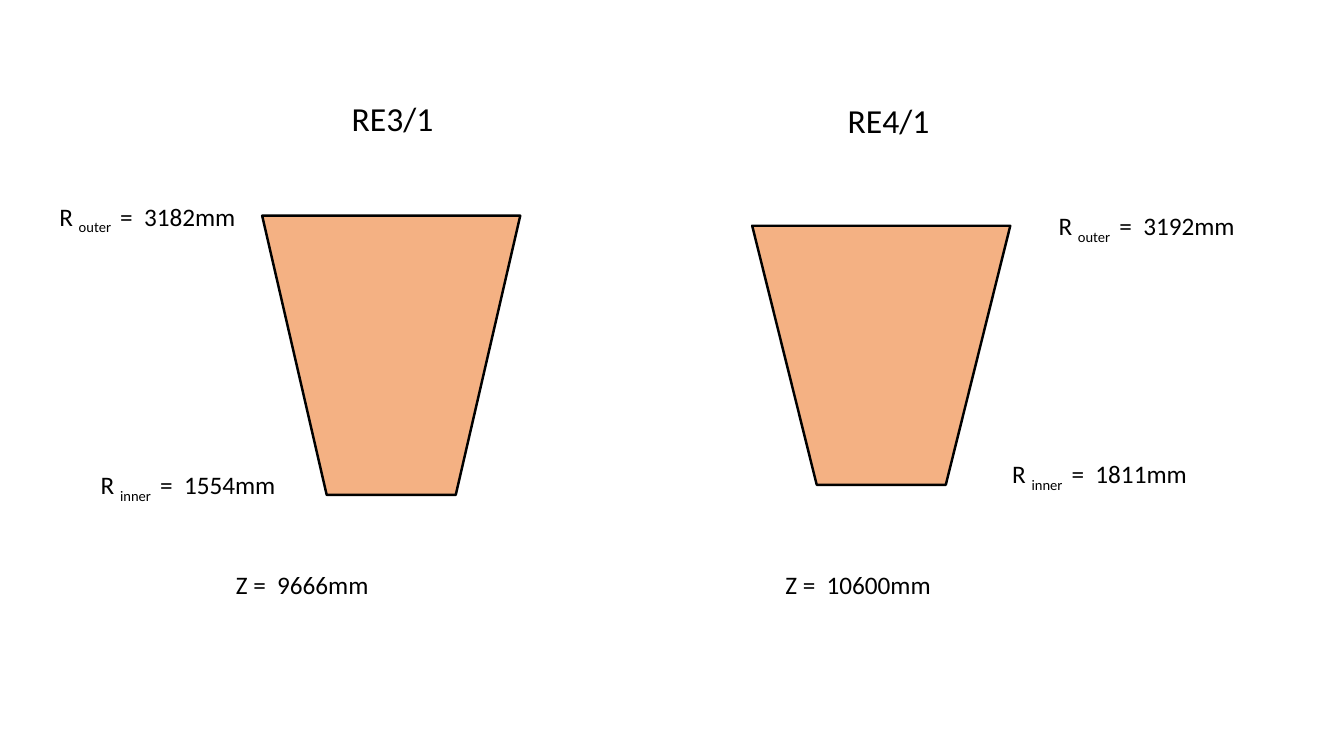
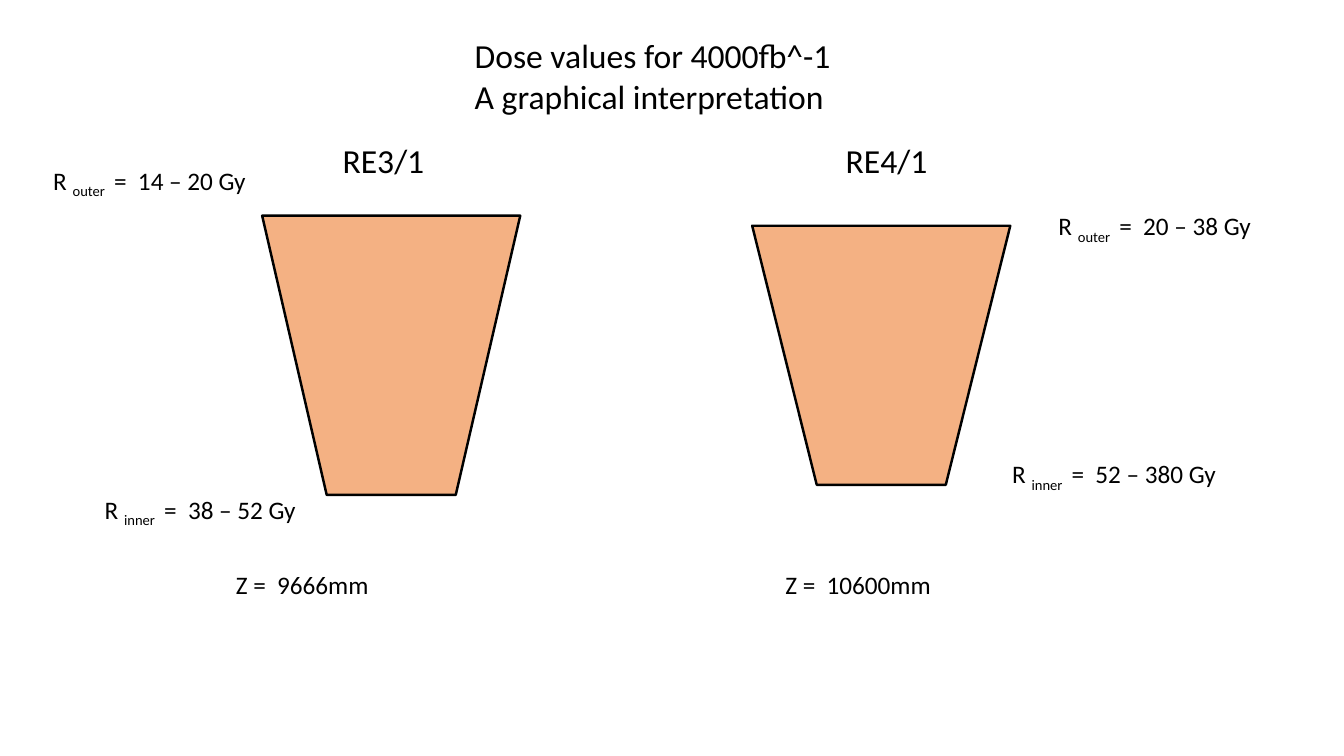
from dataclasses import dataclass

from pptx import Presentation
from pptx.dml.color import RGBColor
from pptx.enum.shapes import MSO_SHAPE
from pptx.enum.text import MSO_AUTO_SIZE
from pptx.util import Inches, Pt

TRAPEZOID = MSO_SHAPE.TRAPEZOID
GROW = MSO_AUTO_SIZE.SHAPE_TO_FIT_TEXT

COLORS = {"ink": "000000", "chamber": "F4B183"}
FONT = "Calibri"
HEAD, BODY = 24, 18


@dataclass
class Chamber:
    left: float
    top: float
    width: float
    height: float


@dataclass
class Label:
    text: str
    left: float
    top: float
    width: float
    size: int = BODY
    sub: str = ""  # subscript after the leading "R "


# Parts shared by both slides
CHAMBERS = [Chamber(2.6, 2.14, 2.56, 2.77), Chamber(7.46, 2.24, 2.56, 2.57)]
DEPTHS = [
    Label("Z =  9666mm", 2.24, 5.6, 2.11),
    Label("Z =  10600mm", 7.69, 5.6, 2.11),
]

# Labels of each slide
RADII = [
    Label("RE3/1", 3.39, 0.92, 1.34, HEAD),
    Label("RE4/1", 8.31, 0.94, 1.13, HEAD),
    Label(" =  3182mm", 0.49, 1.95, 2.11, sub="outer "),
    Label(" =  1811mm", 9.94, 4.5, 2.11, sub="inner "),
    Label(" =  3192mm", 10.4, 2.04, 2.11, sub="outer "),
    Label(" =  1554mm", 0.9, 4.61, 2.11, sub="inner "),
]
DOSES = [
    Label("RE3/1", 3.3, 1.34, 1.34, HEAD),
    Label("RE4/1", 8.29, 1.34, 1.13, HEAD),
    Label(" =  14 – 20 Gy", 0.43, 1.59, 2.43, sub="outer "),
    Label(" =  52 – 380 Gy", 9.94, 4.5, 2.38, sub="inner "),
    Label(" =  20 – 38 Gy", 10.4, 2.04, 2.4, sub="outer "),
    Label(" =  38 – 52 Gy", 0.94, 4.85, 2.3, sub="inner "),
    Label("Dose values for 4000fb^-1\nA graphical interpretation",
          4.61, 0.3, 3.87, HEAD),
]


def color(name: str) -> RGBColor:
    return RGBColor.from_string(COLORS[name])


def add_run(para, text: str, *, size: int = BODY, base: int = 0) -> None:
    run = para.add_run()
    run.text = text
    run.font.name = FONT
    run.font.size = Pt(size)
    run.font.color.rgb = color("ink")
    if base:
        run.font._element.set("baseline", str(base * 1000))


def draw_label(slide, label: Label) -> None:
    lines = label.text.split("\n")
    height = 0.1 + len(lines) * label.size / 60
    box = slide.shapes.add_textbox(Inches(label.left), Inches(label.top),
                                   Inches(label.width), Inches(height))
    frame = box.text_frame
    frame.word_wrap = True
    frame.auto_size = GROW
    for index, line in enumerate(lines):
        para = frame.add_paragraph() if index else frame.paragraphs[0]
        if label.sub:
            add_run(para, "R ", size=label.size)
            add_run(para, label.sub, size=label.size, base=-25)
        add_run(para, line, size=label.size)


def draw_chamber(slide, part: Chamber) -> None:
    shape = slide.shapes.add_shape(TRAPEZOID, Inches(part.left), Inches(part.top),
                                   Inches(part.width), Inches(part.height))
    shape.rotation = 180
    shape.shadow.inherit = False
    shape.fill.solid()
    shape.fill.fore_color.rgb = color("chamber")
    shape.line.color.rgb = color("ink")
    shape.line.width = Pt(1.75)


def main() -> None:
    deck = Presentation()
    deck.slide_width, deck.slide_height = Inches(13.33), Inches(7.5)
    for labels in (RADII, DOSES):
        slide = deck.slides.add_slide(deck.slide_layouts[6])
        for part in CHAMBERS:
            draw_chamber(slide, part)
        for label in labels + DEPTHS:
            draw_label(slide, label)
    deck.save("out.pptx")


if __name__ == "__main__":
    main()
